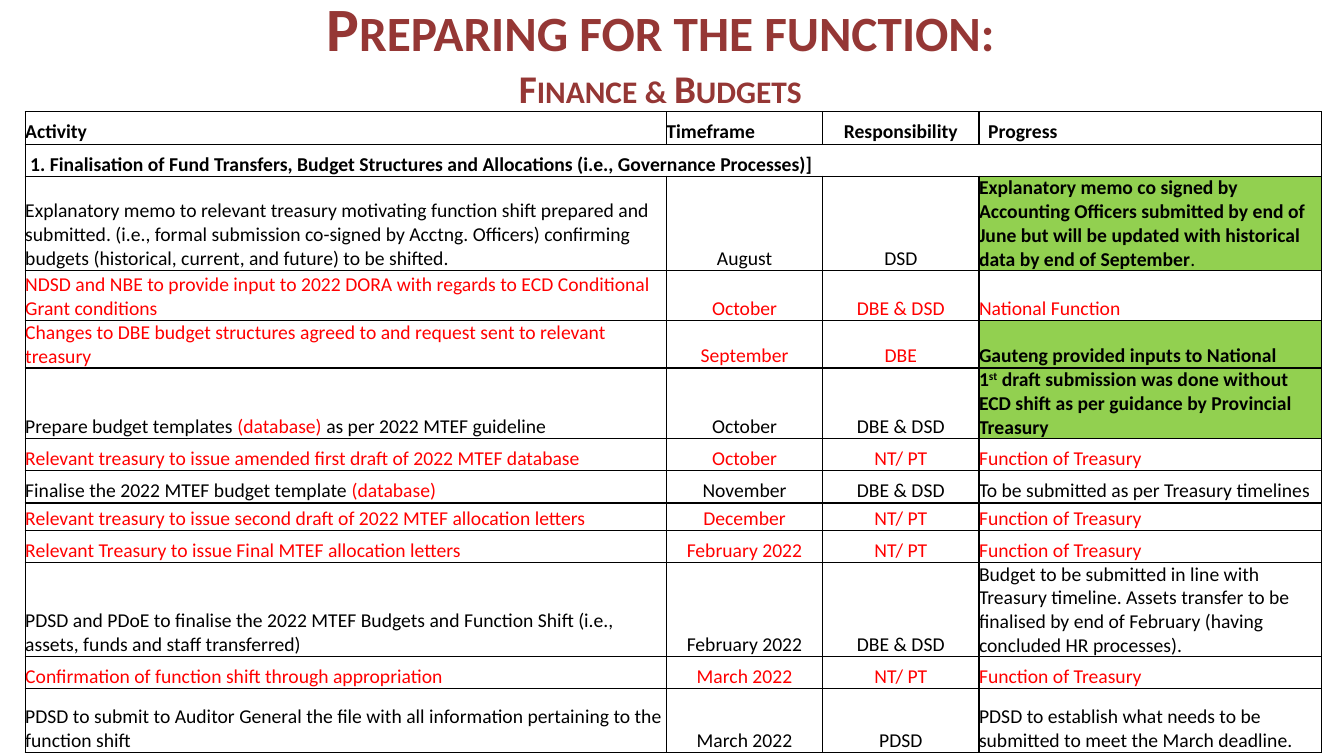
import pptx
import pptx.util
import pptx.dml.color
import pptx.enum.text
from dataclasses import dataclass
from lxml import etree
from pptx.util import Inches

ALIGN = pptx.enum.text.PP_ALIGN
ANCHOR = pptx.enum.text.MSO_ANCHOR


@dataclass(frozen=True)
class Theme:
    face: str = "Calibri"
    title: str = "953735"
    black: str = "000000"
    red: str = "FF0000"
    white: str = "FFFFFF"
    green: str = "92D050"
    large: int = 44
    medium: int = 28
    body: int = 14


THEME = Theme()
BLACK, RED = THEME.black, THEME.red

WIDTHS = [6.36, 1.55, 1.55, 3.4]
HEIGHTS = [0.32, 0.32, 0.82, 0.5, 0.46, 0.32, 0.32, 0.32, 0.27, 0.32, 0.63, 0.32, 0.63]

HEADS = ["Activity", "Timeframe", "Responsibility", "Progress"]
SECTION = ("1. Finalisation of Fund Transfers, Budget Structures and "
           "Allocations (i.e., Governance Processes)]")

# Row colour, then activity, timeframe, responsibility and progress.
# A list holds runs, each a text with the settings that differ.
TASKS = [
    (BLACK, "Explanatory memo to relevant treasury motivating function shift prepared "
     "and submitted. (i.e., formal submission co-signed by Acctng. Officers) "
     "confirming budgets (historical, current, and future) to be shifted.",
     "August", "DSD",
     [("Explanatory memo co signed by Accounting Officers submitted by end of June "
       "but will be updated with historical data by end of September", {"bold": True}),
      (".", {})]),
    (RED, "NDSD and NBE to provide input to 2022 DORA with regards to ECD "
     "Conditional Grant conditions", "October", "DBE & DSD", "National Function"),
    (RED, "Changes to DBE budget structures agreed to and request sent to relevant "
     "treasury", "September", "DBE",
     [("Gauteng provided inputs to National", {"bold": True, "color": BLACK})]),
    (BLACK, [("Prepare budget templates ", {}), ("(database) ", {"color": RED}),
             ("as per 2022 MTEF guideline", {})], "October", "DBE & DSD",
     [("1", {"bold": True}), ("st", {"bold": True, "raised": True}),
      (" draft submission was done without ECD shift as per guidance by "
       "Provincial Treasury", {"bold": True})]),
    (RED, "Relevant treasury to issue amended first draft of 2022 MTEF database",
     "October", "NT/ PT", "Function of Treasury"),
    (BLACK, [("Finalise the 2022 MTEF budget template ", {}),
             ("(database)", {"color": RED})],
     "November", "DBE & DSD", "To be submitted as per Treasury timelines"),
    (RED, "Relevant treasury to issue second draft of 2022 MTEF allocation letters",
     "December", "NT/ PT", "Function of Treasury"),
    (RED, "Relevant Treasury to issue Final MTEF allocation letters",
     "February 2022", "NT/ PT", "Function of Treasury"),
    (BLACK, "PDSD and PDoE to finalise the 2022 MTEF Budgets and Function Shift "
     "(i.e., assets, funds and staff transferred)", "February 2022", "DBE & DSD",
     "Budget to be submitted in line with Treasury timeline. Assets transfer to be "
     "finalised by end of February (having concluded HR processes)."),
    (RED, "Confirmation of function shift through appropriation",
     "March 2022", "NT/ PT", "Function of Treasury"),
    (BLACK, "PDSD to submit to Auditor General the file with all information "
     "pertaining to the function shift", "March 2022", "PDSD",
     "PDSD to establish what needs to be submitted to meet the March deadline."),
]


def paint(font, color):
    font.color.rgb = pptx.dml.color.RGBColor.from_string(color)


def style(para, size, color, bold, align):
    para.alignment = align
    para.font.name = THEME.face
    para.font.size = pptx.util.Pt(size)
    para.font.bold = bold
    paint(para.font, color)


def add_runs(para, runs):
    for text, look in runs:
        run = para.add_run()
        run.text = text
        if "bold" in look:
            run.font.bold = look["bold"]
        if "color" in look:
            paint(run.font, look["color"])
        if look.get("raised"):
            run._r.get_or_add_rPr().set("baseline", "30000")


def add_title(slide):
    box = slide.shapes.add_textbox(Inches(1.69), Inches(0.01), Inches(9.72), Inches(0.98))
    frame = box.text_frame
    frame.word_wrap = True
    frame.vertical_anchor = ANCHOR.MIDDLE
    lines = [("Preparing for the function:", THEME.large),
             ("Finance & Budgets", THEME.medium)]
    for index, (text, size) in enumerate(lines):
        para = frame.add_paragraph() if index else frame.paragraphs[0]
        style(para, size, THEME.title, True, ALIGN.CENTER)
        run = para.add_run()
        run.text = text
        run._r.get_or_add_rPr().set("cap", "small")


def add_edges(cell):
    props = cell._tc.get_or_add_tcPr()
    space = "{http://schemas.openxmlformats.org/drawingml/2006/main}"
    for side in ("lnL", "lnR", "lnT", "lnB"):
        line = etree.SubElement(props, space + side, w=str(pptx.util.Pt(1)))
        fill = etree.SubElement(line, space + "solidFill")
        etree.SubElement(fill, space + "srgbClr", val=BLACK)


def fill_cell(cell, text, color=BLACK, bold=False, align=ALIGN.LEFT,
              fill=THEME.white, inset=0, indent=0):
    cell.margin_left = cell.margin_right = cell.margin_top = Inches(inset)
    cell.margin_bottom = 0
    cell.vertical_anchor = ANCHOR.BOTTOM
    add_edges(cell)
    cell.fill.solid()
    cell.fill.fore_color.rgb = pptx.dml.color.RGBColor.from_string(fill)
    para = cell.text_frame.paragraphs[0]
    if indent:
        para._p.get_or_add_pPr().set("marL", str(Inches(indent)))
    style(para, THEME.body, color, bold, align)
    add_runs(para, [(text, {})] if isinstance(text, str) else text)


def add_plan(slide):
    frame = slide.shapes.add_table(len(HEIGHTS), len(WIDTHS), Inches(0.25), Inches(1.11),
                                   Inches(sum(WIDTHS)), Inches(sum(HEIGHTS)))
    table = frame.table
    table.first_row = table.horz_banding = False
    for column, width in zip(table.columns, WIDTHS):
        column.width = Inches(width)
    for row, height in zip(table.rows, HEIGHTS):
        row.height = Inches(height)

    # Heading row
    for col, text in enumerate(HEADS):
        fill_cell(table.cell(0, col), text, bold=True,
                  align=ALIGN.CENTER if col == 2 else ALIGN.LEFT,
                  indent=0.09 if col == 3 else 0)

    # Section row across all columns
    table.cell(1, 0).merge(table.cell(1, 3))
    for col in range(len(WIDTHS)):
        fill_cell(table.cell(1, col), "" if col else SECTION, bold=True, indent=0.05)

    # Task rows; progress reported in bold is marked green
    for row, (color, *texts) in enumerate(TASKS, 2):
        for col, text in enumerate(texts):
            done = col == 3 and isinstance(text, list)
            fill_cell(table.cell(row, col), text, color,
                      align=ALIGN.CENTER if col in (1, 2) else ALIGN.LEFT,
                      fill=THEME.green if done else THEME.white,
                      inset=0.01 if col == 2 else 0)


def main():
    deck = pptx.Presentation()
    deck.slide_width, deck.slide_height = Inches(13.33), Inches(7.5)
    slide = deck.slides.add_slide(deck.slide_layouts[6])
    add_title(slide)
    add_plan(slide)
    deck.save("out.pptx")


if __name__ == "__main__":
    main()
